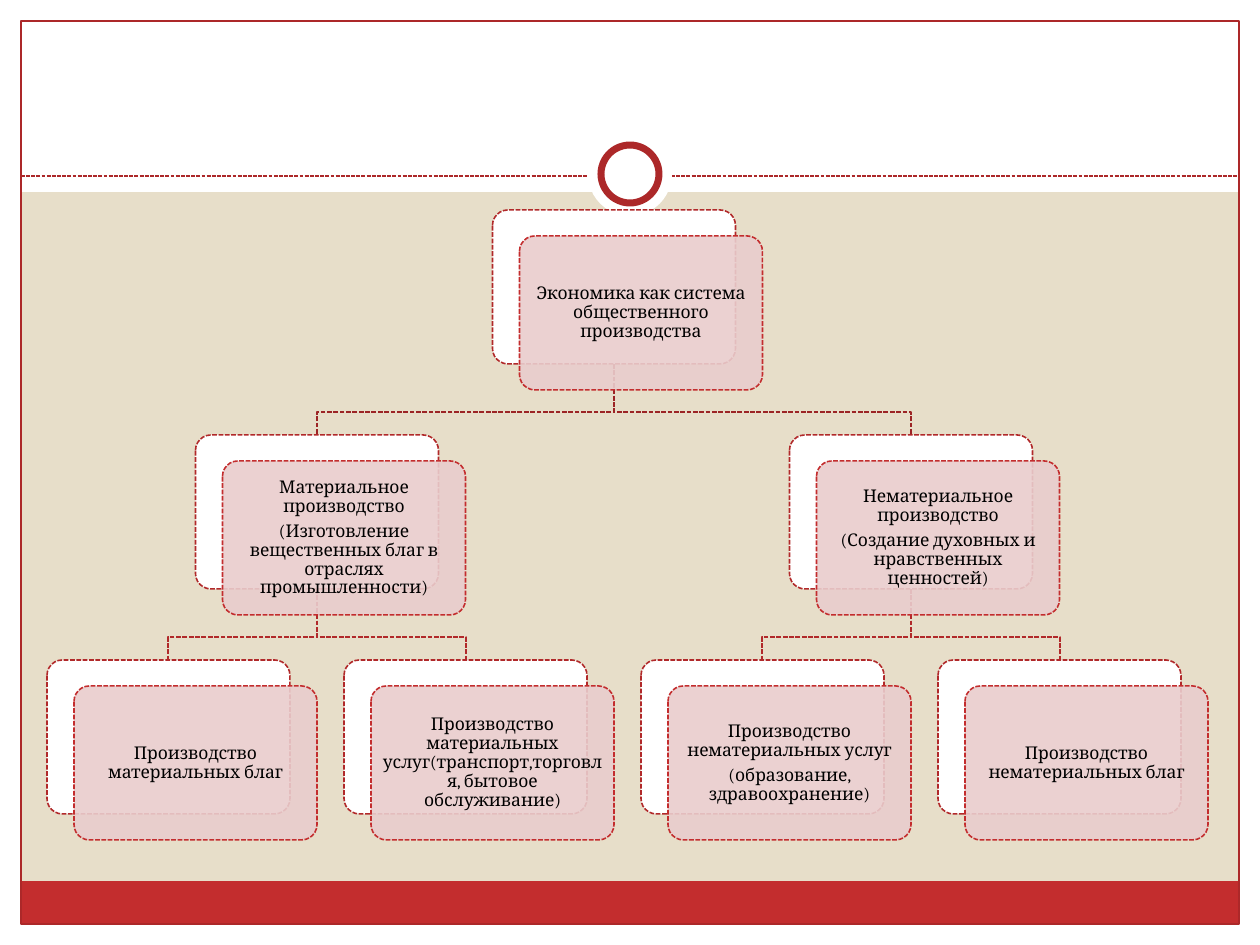
from lxml.etree import SubElement
from pptx import Presentation
from pptx.dml.color import RGBColor
from pptx.enum.dml import MSO_LINE
from pptx.enum.shapes import MSO_CONNECTOR, MSO_SHAPE
from pptx.enum.text import MSO_ANCHOR, PP_ALIGN
from pptx.oxml.ns import qn
from pptx.util import Emu, Pt

EMU_PER_PX = 914400 / 126
SLIDE_W, SLIDE_H = 1260, 945
MARGIN = 21
FRAME_W = SLIDE_W - 2 * MARGIN

COLORS = {
    "sand": "E7DEC9",
    "white": "FFFFFF",
    "footer": "C32D2E",
    "frame": "AC2829",
    "back_edge": "B1292A",
    "front": "E9CDCD",
    "front_edge": "C32D2E",
    "upper_link": "9C2425",
    "lower_link": "B1292A",
    "text": "000000",
}

CARD_W, CARD_H = 243, 154
CARD_SHIFT_X, CARD_SHIFT_Y = 27, 26
FIRST_LEFT, COLUMN_STEP = 47, 297
FIRST_TOP, LEVEL_STEP = 210, 225
LINK_DROP = 48
TEXT_INSET = 5

# key: (column, level, parent, paragraphs)
CARDS = {
    "economy": (1.5, 0, None, ["Экономика как система общественного производства"]),
    "material": (0.5, 1, "economy", [
        "Материальное производство",
        "(Изготовление вещественных благ в отраслях промышленности)"]),
    "goods": (0, 2, "material", ["Производство материальных благ"]),
    "services": (1, 2, "material", [
        "Производство материальных услуг(транспорт,торговля, бытовое обслуживание)"]),
    "nonmaterial": (2.5, 1, "economy", [
        "Нематериальное производство",
        "(Создание духовных и нравственных ценностей)"]),
    "nonmaterial_services": (2, 2, "nonmaterial", [
        "Производство нематериальных услуг",
        "(образование, здравоохранение)"]),
    "nonmaterial_goods": (3, 2, "nonmaterial", ["Производство нематериальных благ"]),
}


def px(length):
    return Emu(round(length * EMU_PER_PX))


def rgb(name):
    return RGBColor.from_string(COLORS[name])


def set_line(line, color, width, dash=None):
    line.color.rgb = rgb(color)
    line.width = Pt(width)
    if dash:
        line.dash_style = dash


def add_box(slide, kind, box, fill=None, edge=None, width=0.9, dash=None):
    shape = slide.shapes.add_shape(kind, *map(px, box))
    shape.shadow.inherit = False
    if fill:
        shape.fill.solid()
        shape.fill.fore_color.rgb = rgb(fill)
    else:
        shape.fill.background()
    if edge:
        set_line(shape.line, edge, width, dash)
    else:
        shape.line.fill.background()
    return shape


def add_frame(slide):
    """Draw the white margins, footer band, border, divider and ring."""
    bands = [
        ((0, SLIDE_H - MARGIN, SLIDE_W, MARGIN), "white"),
        ((0, 0, SLIDE_W, 192), "white"),
        ((0, 0, MARGIN, SLIDE_H), "white"),
        ((SLIDE_W - MARGIN, 0, MARGIN, SLIDE_H), "white"),
        ((MARGIN, 881, FRAME_W, 43), "footer"),
    ]
    for box, fill in bands:
        add_box(slide, MSO_SHAPE.RECTANGLE, box, fill)
    add_box(slide, MSO_SHAPE.RECTANGLE,
            (MARGIN, MARGIN, FRAME_W, SLIDE_H - 2 * MARGIN), edge="frame", width=0.75)
    divider = slide.shapes.add_connector(
        MSO_CONNECTOR.STRAIGHT, px(MARGIN), px(176), px(SLIDE_W - MARGIN), px(176))
    set_line(divider.line, "frame", 0.75, MSO_LINE.SQUARE_DOT)
    SubElement(divider._element.spPr, qn("a:effectLst"))
    add_box(slide, MSO_SHAPE.OVAL, (588, 132, 84, 84), "white")
    add_box(slide, MSO_SHAPE.OVAL, (601, 145, 58, 58), "white", "frame", 4)


def card_origin(key):
    column, level = CARDS[key][:2]
    return FIRST_LEFT + COLUMN_STEP * column, FIRST_TOP + LEVEL_STEP * level


def add_link(slide, parent, child):
    parent_left, parent_top = card_origin(parent)
    child_left, child_top = card_origin(child)
    start_x, end_x = parent_left + CARD_W / 2, child_left + CARD_W / 2
    start_y = parent_top + CARD_H
    bend_y = start_y + LINK_DROP
    builder = slide.shapes.build_freeform(start_x, start_y, scale=EMU_PER_PX)
    builder.add_line_segments(
        [(start_x, bend_y), (end_x, bend_y), (end_x, child_top)], close=False)
    link = builder.convert_to_shape()
    link.shadow.inherit = False
    link.fill.background()
    color = "upper_link" if CARDS[parent][1] == 0 else "lower_link"
    set_line(link.line, color, 0.9, MSO_LINE.SQUARE_DOT)


def set_opacity(shape, percent):
    color = shape.fill._xPr.find(qn("a:solidFill"))[0]
    SubElement(color, qn("a:alpha")).set("val", str(percent * 1000))


def write_text(shape, paragraphs):
    frame = shape.text_frame
    frame_format = {
        "word_wrap": True,
        "vertical_anchor": MSO_ANCHOR.MIDDLE,
        **{f"margin_{side}": px(TEXT_INSET) for side in ("left", "top", "right", "bottom")},
    }
    for name, value in frame_format.items():
        setattr(frame, name, value)
    frame.text = "\n".join(paragraphs)
    paragraph_format = {
        "alignment": PP_ALIGN.CENTER, "line_spacing": 0.9, "space_after": Pt(3.5)}
    for paragraph in frame.paragraphs:
        for name, value in paragraph_format.items():
            setattr(paragraph, name, value)
        for run in paragraph.runs:
            run.font.name = "Cambria"
            run.font.size = Pt(10)
            run.font.color.rgb = rgb("text")


def add_card(slide, key):
    """Draw a white back plate and the translucent text plate shifted over it."""
    left, top = card_origin(key)
    plates = []
    for shift_x, shift_y, fill, edge in (
            (0, 0, "white", "back_edge"),
            (CARD_SHIFT_X, CARD_SHIFT_Y, "front", "front_edge")):
        plate = add_box(slide, MSO_SHAPE.ROUNDED_RECTANGLE,
                        (left + shift_x, top + shift_y, CARD_W, CARD_H),
                        fill, edge, dash=MSO_LINE.SQUARE_DOT)
        plate.adjustments[0] = 0.1
        plates.append(plate)
    front = plates[-1]
    set_opacity(front, 90)
    write_text(front, CARDS[key][3])


def main():
    presentation = Presentation()
    presentation.slide_width, presentation.slide_height = px(SLIDE_W), px(SLIDE_H)
    slide = presentation.slides.add_slide(presentation.slide_layouts[6])
    slide.background.fill.solid()
    slide.background.fill.fore_color.rgb = rgb("sand")
    add_frame(slide)
    for key, (_, _, parent, _) in CARDS.items():
        if parent:
            add_link(slide, parent, key)
    for key in CARDS:
        add_card(slide, key)
    presentation.save("out.pptx")


if __name__ == "__main__":
    main()
